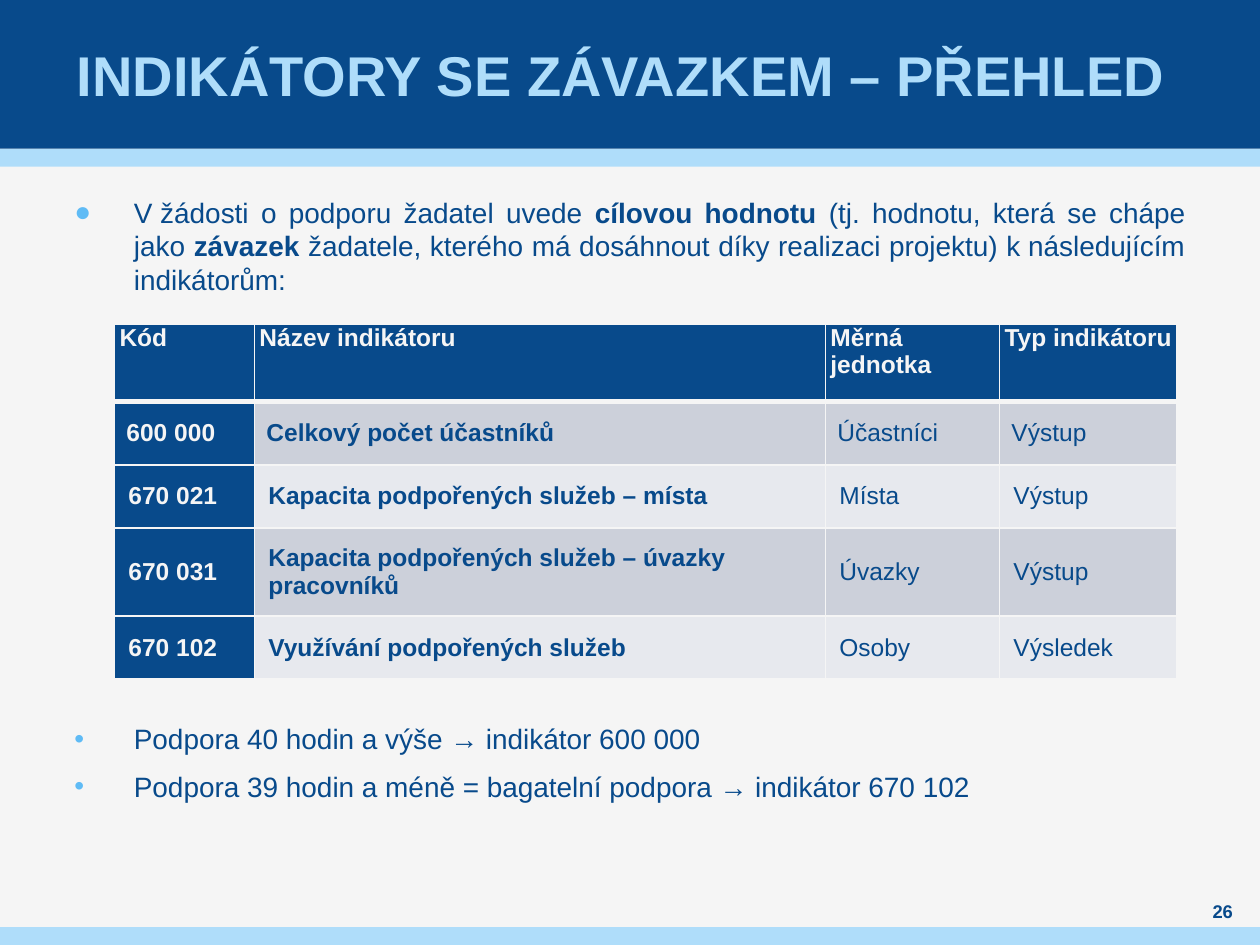
import dataclasses

import pptx
import pptx.dml.color
import pptx.enum.shapes
import pptx.enum.text
import pptx.oxml
import pptx.oxml.ns
import pptx.util
from pptx.util import Cm, Pt

ALIGN = pptx.enum.text.PP_ALIGN
ANCHOR = pptx.enum.text.MSO_ANCHOR


@dataclasses.dataclass(frozen=True)
class Theme:
    font: str = "Arial"
    navy: str = "084A8B"
    sky: str = "AFDDFA"
    bullet: str = "5FBBF5"
    paper: str = "F5F5F5"
    band_dark: str = "CCD0DA"
    band_light: str = "E7E9EE"
    title_size: float = 32
    body_size: float = 16
    table_size: float = 14
    number_size: float = 10.5


THEME = Theme()

TITLE = "INDIKÁTORY SE ZÁVAZKEM – PŘEHLED"
# Runs of the introduction: (text, bold)
INTRO = [
    ("V\u00a0žádosti o podporu žadatel uvede ", False),
    ("cílovou hodnotu ", True),
    ("(tj. hodnotu, která se chápe jako ", False),
    ("závazek", True),
    (" žadatele, kterého má dosáhnout díky realizaci projektu) "
     "k\u00a0následujícím indikátorům:", False),
]
INDICATORS = [
    ["Kód", "Název indikátoru", "Měrná jednotka", "Typ indikátoru"],
    ["600 000", "Celkový počet účastníků", "Účastníci", "Výstup"],
    ["670 021", "Kapacita podpořených služeb – místa", "Místa", "Výstup"],
    ["670 031", "Kapacita podpořených služeb – úvazky pracovníků", "Úvazky", "Výstup"],
    ["670 102", "Využívání podpořených služeb", "Osoby", "Výsledek"],
]
SUPPORT_RULES = [
    "Podpora 40 hodin a výše → indikátor 600 000",
    "Podpora 39 hodin a méně = bagatelní podpora → indikátor 670 102",
]


def rgb(value):
    return pptx.dml.color.RGBColor.from_string(value)


def add_band(slide, left, top, width, height, color):
    band = slide.shapes.add_shape(
        pptx.enum.shapes.MSO_SHAPE.RECTANGLE, Cm(left), Cm(top), Cm(width), Cm(height))
    band.shadow.inherit = False
    band.fill.solid()
    band.fill.fore_color.rgb = rgb(color)
    band.line.fill.background()


def add_frame(slide, left, top, width, height, anchor=ANCHOR.TOP):
    frame = slide.shapes.add_textbox(Cm(left), Cm(top), Cm(width), Cm(height)).text_frame
    frame.word_wrap = True
    frame.vertical_anchor = anchor
    frame.margin_left = frame.margin_right = frame.margin_top = frame.margin_bottom = 0
    return frame


def style(font, size, color, bold=False):
    font.name = THEME.font
    font.size = Pt(size)
    font.bold = bold
    font.color.rgb = rgb(color)


def add_bullet(paragraph, mark):
    props = paragraph._p.get_or_add_pPr()
    props.set("marL", str(Cm(1.2)))
    props.set("indent", str(-Cm(1.2)))
    namespace = pptx.oxml.ns.nsdecls("a")
    for xml in (f'<a:buClr {namespace}><a:srgbClr val="{THEME.bullet}"/></a:buClr>',
                f'<a:buFont {namespace} typeface="{THEME.font}"/>',
                f'<a:buChar {namespace} char="{mark}"/>'):
        props.append(pptx.oxml.parse_xml(xml))


def set_borders(cell, top, bottom):
    props = cell._tc.get_or_add_tcPr()
    for side, points in (("L", 1), ("R", 1), ("T", top), ("B", bottom)):
        props.append(pptx.oxml.parse_xml(
            f'<a:ln{side} {pptx.oxml.ns.nsdecls("a")} w="{Pt(points)}"><a:solidFill>'
            f'<a:srgbClr val="{THEME.paper}"/></a:solidFill></a:ln{side}>'))


def add_header(slide, left, top, width, height):
    stripe = 0.36
    add_band(slide, left, top + height, width, stripe, THEME.sky)
    add_band(slide, left, top, width, height, THEME.navy)
    frame = add_frame(slide, left + 0.82, top, width - 2, height, ANCHOR.MIDDLE)
    frame.text = TITLE
    frame.paragraphs[0].alignment = ALIGN.CENTER
    style(frame.paragraphs[0].runs[0].font, THEME.title_size, THEME.sky, True)


def add_intro(slide, left, top, width, height):
    paragraph = add_frame(slide, left, top, width, height).paragraphs[0]
    paragraph.alignment = ALIGN.JUSTIFY
    add_bullet(paragraph, "●")
    for words, bold in INTRO:
        run = paragraph.add_run()
        run.text = words
        style(run.font, THEME.body_size, THEME.navy, bold)


def add_indicator_table(slide, left, top, widths, heights):
    table = slide.shapes.add_table(
        len(heights), len(widths), Cm(left), Cm(top),
        Cm(sum(widths)), Cm(sum(heights))).table
    table.horz_banding = False
    for column, width in zip(table.columns, widths):
        column.width = Cm(width)
    for row, height in zip(table.rows, heights):
        row.height = Cm(height)

    for r, texts in enumerate(INDICATORS):
        inset = (0.1, 0.24)[r] if r < 2 else 0.28
        band = THEME.band_dark if r % 2 else THEME.band_light
        for c, words in enumerate(texts):
            cell = table.cell(r, c)
            heading = r == 0 or c == 0
            set_borders(cell, top=3 if r == 1 else 1, bottom=3 if r == 0 else 1)
            cell.fill.solid()
            cell.fill.fore_color.rgb = rgb(THEME.navy if heading else band)
            cell.margin_left = Cm(inset)
            cell.margin_right = cell.margin_top = cell.margin_bottom = 0
            cell.vertical_anchor = ANCHOR.TOP if r == 0 else ANCHOR.MIDDLE
            cell.text = words
            paragraph = cell.text_frame.paragraphs[0]
            paragraph.space_after = Pt(3)
            style(paragraph.runs[0].font, THEME.table_size,
                  THEME.paper if heading else THEME.navy, heading or c == 1)


def add_support_rules(slide, left, top, width, height):
    frame = add_frame(slide, left, top, width, height)
    frame.text = "\n".join(SUPPORT_RULES)
    for i, paragraph in enumerate(frame.paragraphs):
        paragraph.alignment = ALIGN.JUSTIFY
        paragraph.space_before = Pt(6 if i else 0)
        paragraph.space_after = Pt(2)
        add_bullet(paragraph, "•")
        style(paragraph.runs[0].font, THEME.body_size, THEME.navy)


def add_footer(slide, left, top, width, height):
    add_band(slide, left, top, width, height, THEME.sky)
    frame = add_frame(slide, left + width - 1.4, top - 0.58, 1.3, 0.5, ANCHOR.MIDDLE)
    frame.text = "26"
    frame.paragraphs[0].alignment = ALIGN.CENTER
    style(frame.paragraphs[0].runs[0].font, THEME.number_size, THEME.navy, True)


def main():
    deck = pptx.Presentation()
    deck.slide_width, deck.slide_height = Cm(25.4), Cm(19.05)
    slide = deck.slides.add_slide(deck.slide_layouts[6])
    slide.background.fill.solid()
    slide.background.fill.fore_color.rgb = rgb(THEME.paper)

    add_header(slide, 0, 0, 25.4, 3)
    add_intro(slide, 1.5, 3.94, 22.4, 2.2)
    add_indicator_table(slide, 2.31, 6.53, [2.82, 11.51, 3.51, 3.58],
                        [1.57, 1.27, 1.27, 1.78, 1.27])
    add_support_rules(slide, 1.5, 14.55, 22.4, 2.4)
    add_footer(slide, 0, 18.69, 25.4, 0.36)
    deck.save("out.pptx")


if __name__ == "__main__":
    main()
